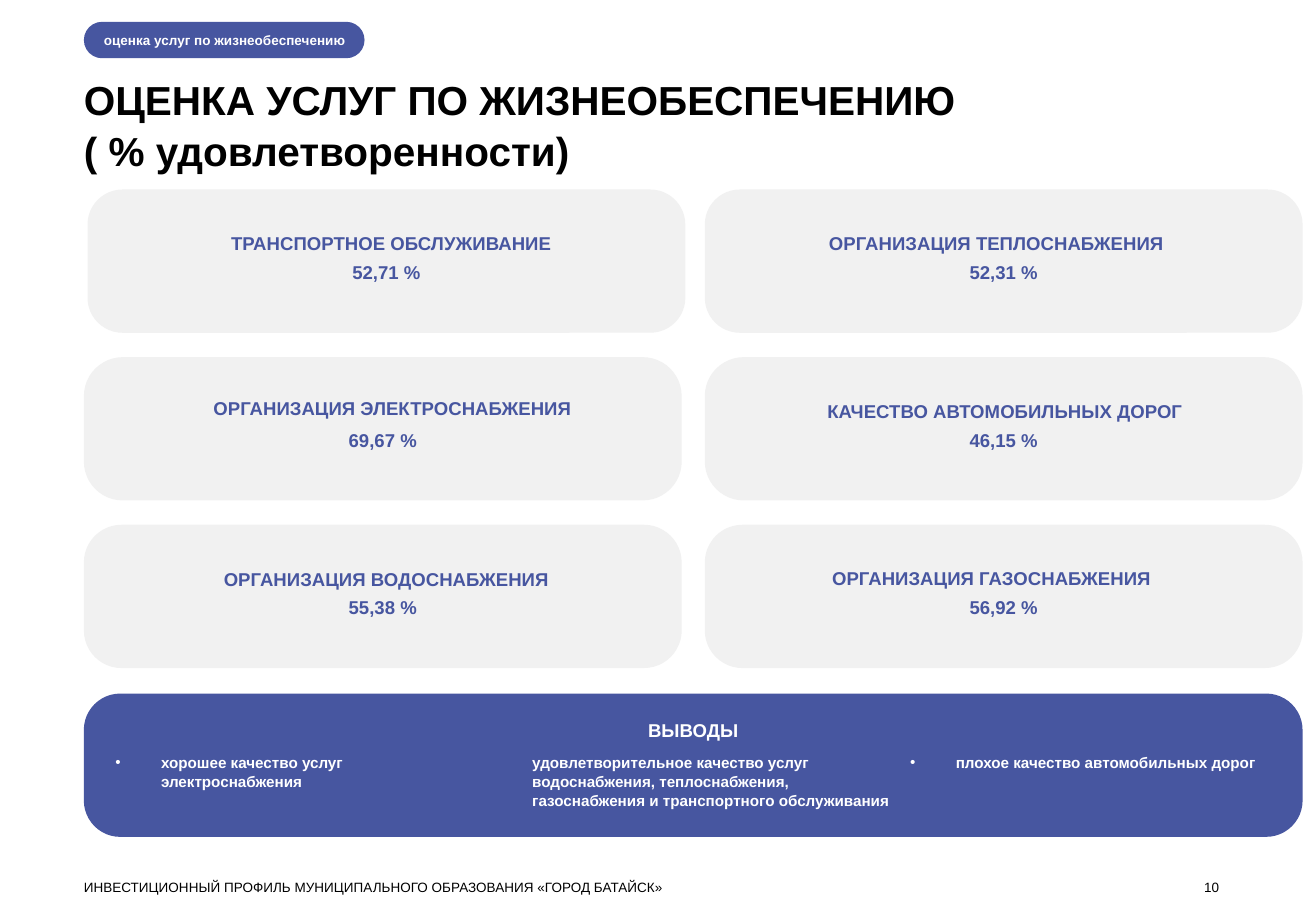
from lxml.etree import SubElement
from pptx import Presentation
from pptx.dml.color import RGBColor
from pptx.enum.shapes import MSO_SHAPE as Shape
from pptx.enum.text import MSO_ANCHOR as Anchor, MSO_AUTO_SIZE as AutoSize, PP_ALIGN as Align
from pptx.oxml.ns import qn
from pptx.util import Inches, Pt

TITLE = "ОЦЕНКА УСЛУГ ПО ЖИЗНЕОБЕСПЕЧЕНИЮ\n( % удовлетворенности)"
SECTION = "оценка услуг по жизнеобеспечению"
FOOTER = "ИНВЕСТИЦИОННЫЙ ПРОФИЛЬ МУНИЦИПАЛЬНОГО ОБРАЗОВАНИЯ «ГОРОД БАТАЙСК»"
PAGE = "10"
# Rows of (label, value, card shift, label centre from card centre, label top in card)
SERVICES = [
    [("ТРАНСПОРТНОЕ ОБСЛУЖИВАНИЕ", "52,71 %", 0.03, 0.04, 0.34),
     ("ОРГАНИЗАЦИЯ ТЕПЛОСНАБЖЕНИЯ", "52,31 %", 0, -0.06, 0.34)],
    [("ОРГАНИЗАЦИЯ ЭЛЕКТРОСНАБЖЕНИЯ", "69,67 %", 0, 0.08, 0.32),
     ("КАЧЕСТВО АВТОМОБИЛЬНЫХ ДОРОГ", "46,15 %", 0, 0.01, 0.34)],
    [("ОРГАНИЗАЦИЯ ВОДОСНАБЖЕНИЯ", "55,38 %", 0, 0.03, 0.35),
     ("ОРГАНИЗАЦИЯ ГАЗОСНАБЖЕНИЯ", "56,92 %", 0, -0.1, 0.34)],
]
CARD_ROUNDING = [0.245, 0.272, 0.263]
CONCLUSIONS_HEADING = "ВЫВОДЫ"
CONCLUSIONS = [
    (0.95, "хорошее качество услуг электроснабжения"),
    (4.38, "удовлетворительное качество услуг водоснабжения, теплоснабжения, "
           "газоснабжения и транспортного обслуживания"),
    (7.49, "плохое качество автомобильных дорог"),
]

BLUE = RGBColor(0x47, 0x56, 0xA0)
GREY = RGBColor(0xF1, 0xF1, 0xF1)
WHITE = RGBColor(0xFF, 0xFF, 0xFF)
BLACK = RGBColor(0, 0, 0)

# Card grid, in inches
LEFT, TOP = 0.69, 1.56
CARD_WIDTH, CARD_HEIGHT = 4.92, 1.18
COLUMN_STEP, ROW_STEP = 5.11, 1.38
LABEL_WIDTH = 4.4
FULL_WIDTH = COLUMN_STEP + CARD_WIDTH
BANNER_TOP = 5.71
FOOTER_TOP = 7.23


def place(shape, left, top, width, height):
    shape.left, shape.top = Inches(left), Inches(top)
    shape.width, shape.height = Inches(width), Inches(height)


def format_text(shape, text, size, color, bold=True, align=Align.LEFT,
                anchor=Anchor.TOP, insets=(0, 0, 0, 0), line_spacing=1.05):
    frame = shape.text_frame
    frame.text = text
    frame.word_wrap = True
    frame.auto_size = AutoSize.NONE
    frame.vertical_anchor = anchor
    (frame.margin_left, frame.margin_top,
     frame.margin_right, frame.margin_bottom) = map(Inches, insets)
    for paragraph in frame.paragraphs:
        paragraph.alignment = align
        paragraph.line_spacing = line_spacing
        paragraph.space_before = Pt(0)
        font = paragraph.font
        font.name, font.size, font.bold = "Arial", Pt(size), bold
        font.color.rgb = color


def add_bullet(paragraph):
    properties = paragraph._p.get_or_add_pPr()
    properties.set("marL", str(Inches(0.19)))
    properties.set("indent", str(-Inches(0.19)))
    color = SubElement(properties, qn("a:buClr"))
    SubElement(color, qn("a:srgbClr"), val=str(WHITE))
    SubElement(properties, qn("a:buFont"), typeface="Arial")
    SubElement(properties, qn("a:buChar"), char="•")


def add_rounded(slide, left, top, width, height, rounding, fill):
    shape = slide.shapes.add_shape(Shape.ROUNDED_RECTANGLE, Inches(left), Inches(top),
                                   Inches(width), Inches(height))
    shape.adjustments[0] = rounding
    shape.shadow.inherit = False
    shape.fill.solid()
    shape.fill.fore_color.rgb = fill
    shape.line.fill.background()
    return shape


def add_text(slide, left, top, width, height, *text, **options):
    box = slide.shapes.add_textbox(Inches(left), Inches(top), Inches(width), Inches(height))
    format_text(box, *text, **options)


def add_cards(slide):
    for row, (services, rounding) in enumerate(zip(SERVICES, CARD_ROUNDING)):
        for column, (label, value, shift, label_shift, label_top) in enumerate(services):
            left = LEFT + column * COLUMN_STEP + shift
            top = TOP + row * ROW_STEP
            card = add_rounded(slide, left, top, CARD_WIDTH, CARD_HEIGHT, rounding, GREY)
            format_text(card, value, 11, BLUE, align=Align.CENTER, anchor=Anchor.MIDDLE,
                        insets=(0.1, 0.23, 0.1, 0.05), line_spacing=1)
            label_left = left + (CARD_WIDTH - LABEL_WIDTH) / 2 + label_shift
            add_text(slide, label_left, top + label_top, LABEL_WIDTH, 0.19,
                     label, 11, BLUE, align=Align.CENTER)


def add_conclusions(slide, heading, lists):
    add_rounded(slide, LEFT, BANNER_TOP, FULL_WIDTH, CARD_HEIGHT, 0.254, BLUE)
    tree = heading.element.getparent()
    for placeholder in (heading, *lists):
        tree.append(placeholder.element)  # in front of the banner
    place(heading, LEFT, BANNER_TOP + 0.2, FULL_WIDTH, 0.19)
    format_text(heading, CONCLUSIONS_HEADING, 11, WHITE, align=Align.CENTER)
    for placeholder, (left, text) in zip(lists, CONCLUSIONS):
        place(placeholder, left, BANNER_TOP + 0.48, 2.99, 0.61)
        add_bullet(placeholder.text_frame.paragraphs[0])
        format_text(placeholder, text, 9, WHITE)


def main():
    presentation = Presentation()
    presentation.slide_width, presentation.slide_height = Inches(10.83), Inches(7.5)
    comparison = presentation.slide_layouts.get_by_name("Comparison")
    slide = presentation.slides.add_slide(comparison)
    title, heading, *lists = slide.placeholders

    place(title, LEFT, 0.6, 8, 0.81)
    format_text(title, TITLE, 24, BLACK)
    section = add_rounded(slide, LEFT, 0.18, 2.31, 0.3, 0.5, BLUE)
    format_text(section, SECTION, 8, WHITE, anchor=Anchor.MIDDLE,
                insets=(0.12, 0, 0, 0), line_spacing=1)
    add_cards(slide)
    add_conclusions(slide, heading, lists)
    add_text(slide, LEFT, FOOTER_TOP, 8, 0.14, FOOTER, 8, BLACK, bold=False)
    add_text(slide, 9.91, FOOTER_TOP, 0.8, 0.14, PAGE, 8, BLACK, bold=False,
             anchor=Anchor.BOTTOM, line_spacing=1)
    presentation.save("out.pptx")


if __name__ == "__main__":
    main()
